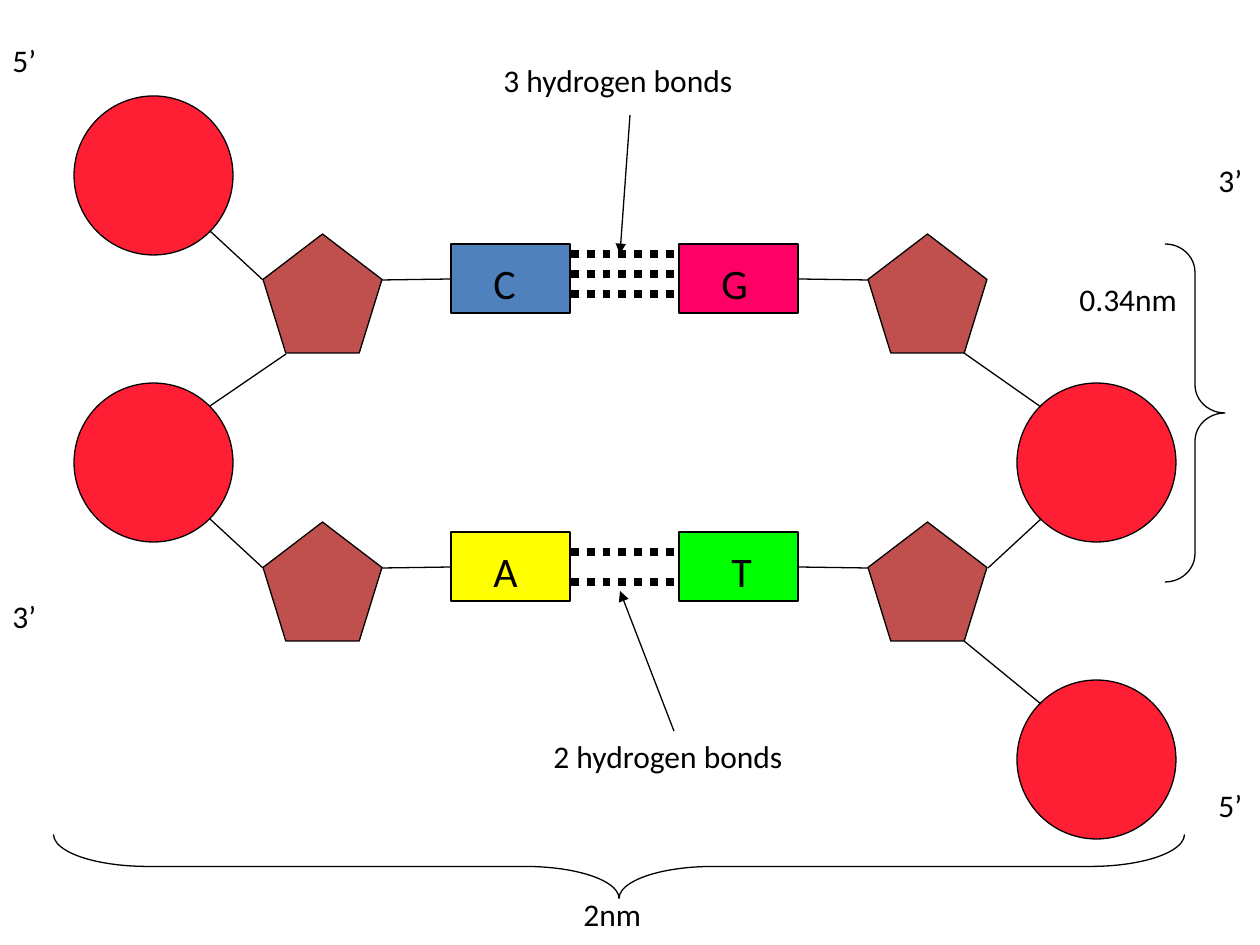
from lxml.etree import SubElement
from pptx import Presentation
from pptx.dml.color import RGBColor
from pptx.enum.dml import MSO_LINE
from pptx.enum.shapes import MSO_CONNECTOR, MSO_SHAPE
from pptx.enum.text import MSO_ANCHOR
from pptx.oxml.ns import qn
from pptx.util import Emu, Pt

SCALE = 914400 / 126
BLACK = "000000"
RED = "FF1F34"
BROWN = "C0504D"
DISC = 159
SUGAR = 119
BASE = (119, 69)


def px(n):
    return Emu(round(n * SCALE))


def color(code):
    return RGBColor.from_string(code)


def write(slide, text, x, y, w, h=50, size=18, font="Calibri", ink=BLACK):
    frame = slide.shapes.add_textbox(px(x), px(y), px(w), px(h)).text_frame
    frame.word_wrap = True
    frame.vertical_anchor = MSO_ANCHOR.TOP
    run = frame.paragraphs[0].add_run()
    run.text = text
    run.font.size = Pt(size)
    run.font.name = font
    run.font.color.rgb = color(ink)


def draw(slide, kind, x, y, w, h, fill=None):
    shape = slide.shapes.add_shape(kind, px(x), px(y), px(w), px(h))
    shape.shadow.inherit = False
    if fill:
        shape.fill.solid()
        shape.fill.fore_color.rgb = color(fill)
    else:
        shape.fill.background()
    shape.line.color.rgb = color(BLACK)
    shape.line.width = Pt(0.75)
    return shape


def link(slide, x1, y1, x2, y2, width=0.75, dash=None, arrow=False):
    line = slide.shapes.add_connector(
        MSO_CONNECTOR.STRAIGHT, px(x1), px(y1), px(x2), px(y2))
    line.line.color.rgb = color(BLACK)
    line.line.width = Pt(width)
    if dash:
        line.line.dash_style = dash
    props = line._element.spPr
    if arrow:
        SubElement(props.find(qn("a:ln")), qn("a:tailEnd"), type="triangle")
    SubElement(props, qn("a:effectLst"))


def strand(slide, x, y, discs, links):
    for top in discs:
        draw(slide, MSO_SHAPE.OVAL, x, y + top, DISC, DISC, RED)
    for x1, y1, x2, y2 in links:
        link(slide, x + x1, y + y1, x + x2, y + y2)


def pair(slide, x, y, bases, bonds):
    for left in (0, 605):
        draw(slide, MSO_SHAPE.REGULAR_PENTAGON, x + left, y, SUGAR, SUGAR, BROWN)
    link(slide, x + 119, y + 46, x + 188, y + 45)
    link(slide, x + 536, y + 45, x + 605, y + 46)
    for left, (text, fill, inset) in zip((188, 416), bases):
        draw(slide, MSO_SHAPE.RECTANGLE, x + left, y + 10, *BASE, fill)
        write(slide, text, x + left + inset, y + 17, 69, h=63, size=24)
    for drop in bonds:
        link(slide, x + 308, y + drop, x + 416, y + drop,
             width=4.5, dash=MSO_LINE.ROUND_DOT)


def brace(slide, x, y, w, h, curve, turn=0):
    shape = draw(slide, MSO_SHAPE.RIGHT_BRACE, x, y, w, h)
    shape.adjustments[0] = curve
    shape.rotation = turn


def note(slide, text, x, y, w, arrow):
    write(slide, text, x, y, w)
    x1, y1, x2, y2 = arrow
    link(slide, x + x1, y + y1, x + x2, y + y2, arrow=True)


def main():
    deck = Presentation()
    deck.slide_width, deck.slide_height = px(1260), px(945)
    slide = deck.slides.add_slide(deck.slide_layouts[6])

    strand(slide, 74, 96, (0, 287),
           [(136, 135, 189, 184), (212, 258, 136, 310), (136, 423, 189, 472)])
    strand(slide, 1017, 383, (0, 297),
           [(-53, -30, 24, 24), (-29, 185, 24, 136), (-53, 258, 24, 321)])

    pair(slide, 263, 234,
         [("C", "4F81BD", 30), ("G", "FF0066", 30)], (20, 40, 60))
    pair(slide, 263, 522,
         [("A", "FFFF00", 30), ("T", "00FF00", 40)], (30, 60))

    note(slide, "3 hydrogen bonds", 491, 55, 277, (139, 60, 129, 199))
    note(slide, "2 hydrogen bonds", 541, 731, 268, (133, 0, 79, -140))

    brace(slide, 1165, 244, 60, 338, 0.47)
    brace(slide, 587, 301, 64, 1131, 1.47, turn=90)

    for text, x, y, w in [
        ("5’", 0, 35, 54), ("3’", 0, 591, 74),
        ("3’", 1206, 155, 69), ("5’", 1206, 780, 54),
        ("0.34nm", 1067, 274, 134), ("2nm", 571, 889, 179),
    ]:
        write(slide, text, x, y, w)

    deck.save("out.pptx")


if __name__ == "__main__":
    main()
